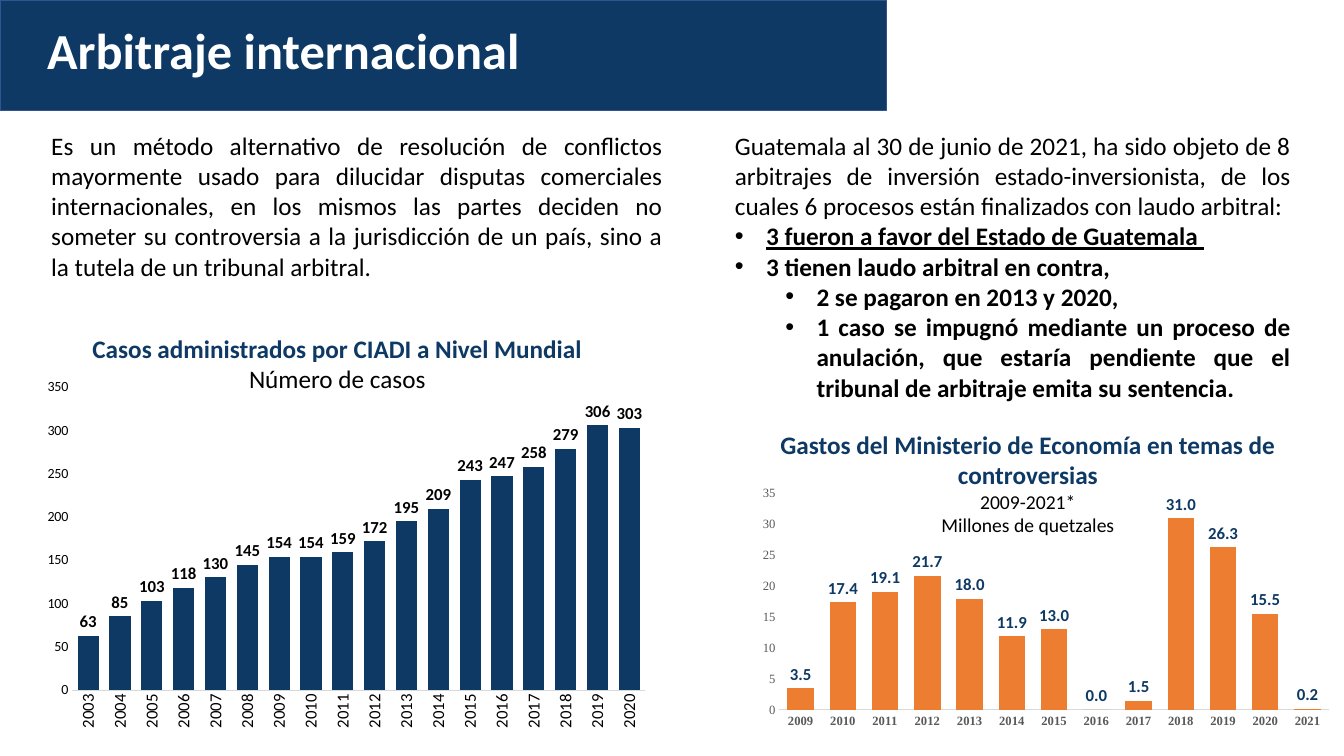
import pptx
import pptx.chart.data
import pptx.dml.color
import pptx.enum.chart
import pptx.enum.shapes
import pptx.enum.text
import pptx.oxml
import pptx.oxml.ns
import pptx.util
from dataclasses import dataclass

Inches = pptx.util.Inches
Align = pptx.enum.text.PP_ALIGN


@dataclass(frozen=True)
class Theme:
    navy: str = "0D3964"
    banner_line: str = "325491"
    orange: str = "ED7D31"
    black: str = "000000"
    white: str = "FFFFFF"
    gray: str = "595959"
    axis_line: str = "D9D9D9"
    body_font: str = "Calibri"
    axis_font: str = "Times New Roman"
    title_size: int = 36
    body_size: int = 18
    note_size: int = 14
    label_size: int = 12
    tick_size: int = 10
    small_tick_size: int = 9


THEME = Theme()


def color(value):
    return pptx.dml.color.RGBColor.from_string(value)


def apply(target, values):
    for name, value in values.items():
        setattr(target, name, value)


def style_font(font, size, fill=THEME.black, name=THEME.body_font, **values):
    apply(font, {"name": name, "size": pptx.util.Pt(size), **values})
    font.fill.solid()
    font.fill.fore_color.rgb = color(fill)


def place(box, left, top, width, height):
    return [Inches(value) for value in (box[0] + left, box[1] + top, width, height)]


def add_bullet(paragraph, level):
    paragraph.level = level
    properties = paragraph._p.get_or_add_pPr()
    properties.set("marL", str(Inches(0.31 + 0.5 * level)))
    properties.set("indent", str(Inches(-0.31)))
    for tag, key, value in (("a:buFont", "typeface", "Arial"), ("a:buChar", "char", "•")):
        element = pptx.oxml.parse_xml(f"<{tag} {pptx.oxml.ns.nsdecls('a')}/>")
        element.set(key, value)
        properties.append(element)


def add_text(slide, position, paragraphs, alignment):
    frame = slide.shapes.add_textbox(*position).text_frame
    apply(frame, {"word_wrap": True, "auto_size": pptx.enum.text.MSO_AUTO_SIZE.SHAPE_TO_FIT_TEXT})
    for index, (text, level, values) in enumerate(paragraphs):
        paragraph = frame.add_paragraph() if index else frame.paragraphs[0]
        paragraph.alignment = alignment
        if level is not None:
            add_bullet(paragraph, level)
        run = paragraph.add_run()
        run.text = text
        style_font(run.font, **{"size": THEME.body_size, **values})


def fix_layout(chart, layout):
    sizes = "".join(
        f'<c:{name} val="{value}"/>' for name, value in zip("xywh", layout)
    )
    chart_element = chart._chartSpace.chart
    plot_area = chart_element.plotArea
    for old in plot_area.findall(pptx.oxml.ns.qn("c:layout")):
        plot_area.remove(old)
    plot_area.insert(0, pptx.oxml.parse_xml(
        f'<c:layout {pptx.oxml.ns.nsdecls("c")}><c:manualLayout>'
        '<c:layoutTarget val="inner"/><c:xMode val="edge"/><c:yMode val="edge"/>'
        f"{sizes}</c:manualLayout></c:layout>"
    ))
    chart_element.addnext(pptx.oxml.parse_xml(
        f'<c:spPr {pptx.oxml.ns.nsdecls("c", "a")}><a:solidFill>'
        f'<a:srgbClr val="{THEME.white}"/></a:solidFill><a:ln><a:noFill/></a:ln></c:spPr>'
    ))


def add_columns(slide, position, first_year, values, fill, gap, step, layout,
                category_font, value_font, label_color, label_format):
    data = pptx.chart.data.CategoryChartData()
    data.categories = [str(first_year + index) for index in range(len(values))]
    data.add_series("Series 1", values)
    chart = slide.shapes.add_chart(
        pptx.enum.chart.XL_CHART_TYPE.COLUMN_CLUSTERED, *position, data
    ).chart
    apply(chart, {"has_legend": False, "has_title": False})
    style_font(chart.font, THEME.tick_size)
    fix_layout(chart, layout)

    plot = chart.plots[0]
    apply(plot, {"gap_width": gap, "overlap": -27, "vary_by_categories": False,
                 "has_data_labels": True})
    series = plot.series[0]
    series.invert_if_negative = False
    series.format.fill.solid()
    series.format.fill.fore_color.rgb = color(fill)
    apply(plot.data_labels, {
        "show_value": True, "number_format": label_format, "number_format_is_linked": False,
        "position": pptx.enum.chart.XL_LABEL_POSITION.OUTSIDE_END,
    })
    style_font(plot.data_labels.font, THEME.label_size, label_color, bold=True)

    for axis, font in ((chart.category_axis, category_font), (chart.value_axis, value_font)):
        apply(axis, {"has_major_gridlines": False,
                     "major_tick_mark": pptx.enum.chart.XL_TICK_MARK.NONE,
                     "minor_tick_mark": pptx.enum.chart.XL_TICK_MARK.NONE})
        style_font(axis.tick_labels.font, **font)
    chart.category_axis.format.line.color.rgb = color(THEME.axis_line)
    chart.category_axis.format.line.width = pptx.util.Pt(0.75)
    chart.value_axis.format.line.fill.background()
    apply(chart.value_axis, {"minimum_scale": 0, "maximum_scale": 7 * step, "major_unit": step})
    return chart


def add_banner(slide, box):
    banner = slide.shapes.add_shape(
        pptx.enum.shapes.MSO_SHAPE.RECTANGLE, *place(box, 0, 0, *box[2:])
    )
    banner.shadow.inherit = False
    banner.fill.solid()
    banner.fill.fore_color.rgb = color(THEME.navy)
    banner.line.color.rgb = color(THEME.banner_line)
    banner.line.width = pptx.util.Pt(1)
    title = {"size": THEME.title_size, "fill": THEME.white, "bold": True}
    add_text(slide, place(box, 0.37, 0.14, 5.94, 0.71),
             [("Arbitraje internacional", None, title)], Align.LEFT)


def add_world_cases(slide, box):
    add_text(slide, place(box, 0, 0, box[2], 1.62), [(
        "Es un método alternativo de resolución de conflictos mayormente usado para dilucidar "
        "disputas comerciales internacionales, en los mismos las partes deciden no someter su "
        "controversia a la jurisdicción de un país, sino a la tutela de un tribunal arbitral.",
        None, {})], Align.JUSTIFY)
    cases = [63, 85, 103, 118, 130, 145, 154, 154, 159, 172, 195, 209, 243, 247, 258, 279, 306, 303]
    chart = add_columns(
        slide, place(box, 0, 2.51, box[2], 3.61), 2003, cases, THEME.navy, 50, 50,
        (0.049, 0.025, 0.908, 0.833), {"size": THEME.label_size}, {"size": THEME.tick_size},
        THEME.black, "General")
    labels = chart.category_axis._element.find(pptx.oxml.ns.qn("c:txPr"))
    labels.find(pptx.oxml.ns.qn("a:bodyPr")).set("rot", "-5400000")
    add_text(slide, place(box, 0.03, 2.02, 5.81, 0.71), [
        ("Casos administrados por CIADI a Nivel Mundial", None, {"fill": THEME.navy, "bold": True}),
        ("Número de casos", None, {}),
    ], Align.CENTER)


def add_guatemala_cases(slide, box):
    bold = {"bold": True}
    add_text(slide, place(box, 0, 0, 5.71, 2.83), [
        ("Guatemala al 30 de junio de 2021, ha sido objeto de 8 arbitrajes de inversión "
         "estado-inversionista, de los cuales 6 procesos están finalizados con laudo arbitral:",
         None, {}),
        ("3 fueron a favor del Estado de Guatemala ", 0, {"bold": True, "underline": True}),
        ("3 tienen laudo arbitral en contra, ", 0, bold),
        ("2 se pagaron en 2013 y 2020, ", 1, bold),
        ("1 caso se impugnó mediante un proceso de anulación, que estaría pendiente que el "
         "tribunal de arbitraje emita su sentencia. ", 1, bold),
    ], Align.JUSTIFY)
    expenses = [3.5, 17.4, 19.1, 21.7, 18, 11.9, 13, 0, 1.5, 31, 26.3, 15.5, 0.2]
    tick = {"size": THEME.small_tick_size, "fill": THEME.gray, "name": THEME.axis_font}
    add_columns(
        slide, place(box, 0.29, 3.56, 5.71, 2.54), 2009, expenses, THEME.orange, 60, 5,
        (0.044, 0.038, 0.954, 0.845), {**tick, "bold": True}, tick, THEME.navy, "#,##0.0")
    note = {"size": THEME.note_size}
    add_text(slide, place(box, 0.29, 2.97, 5.43, 1.18), [
        ("Gastos del Ministerio de Economía en temas de controversias", None,
         {"fill": THEME.navy, "bold": True}),
        ("2009-2021*", None, note),
        ("Millones de quetzales", None, note),
    ], Align.CENTER)


def main():
    presentation = pptx.Presentation()
    apply(presentation, {"slide_width": Inches(13.33), "slide_height": Inches(7.5)})
    slide = presentation.slides.add_slide(presentation.slide_layouts[6])
    add_banner(slide, (0, 0, 8.79, 1.1))
    add_world_cases(slide, (0.41, 1.24, 6.26, 6.12))
    add_guatemala_cases(slide, (7.19, 1.24, 6, 6.1))
    presentation.save("out.pptx")


if __name__ == "__main__":
    main()
